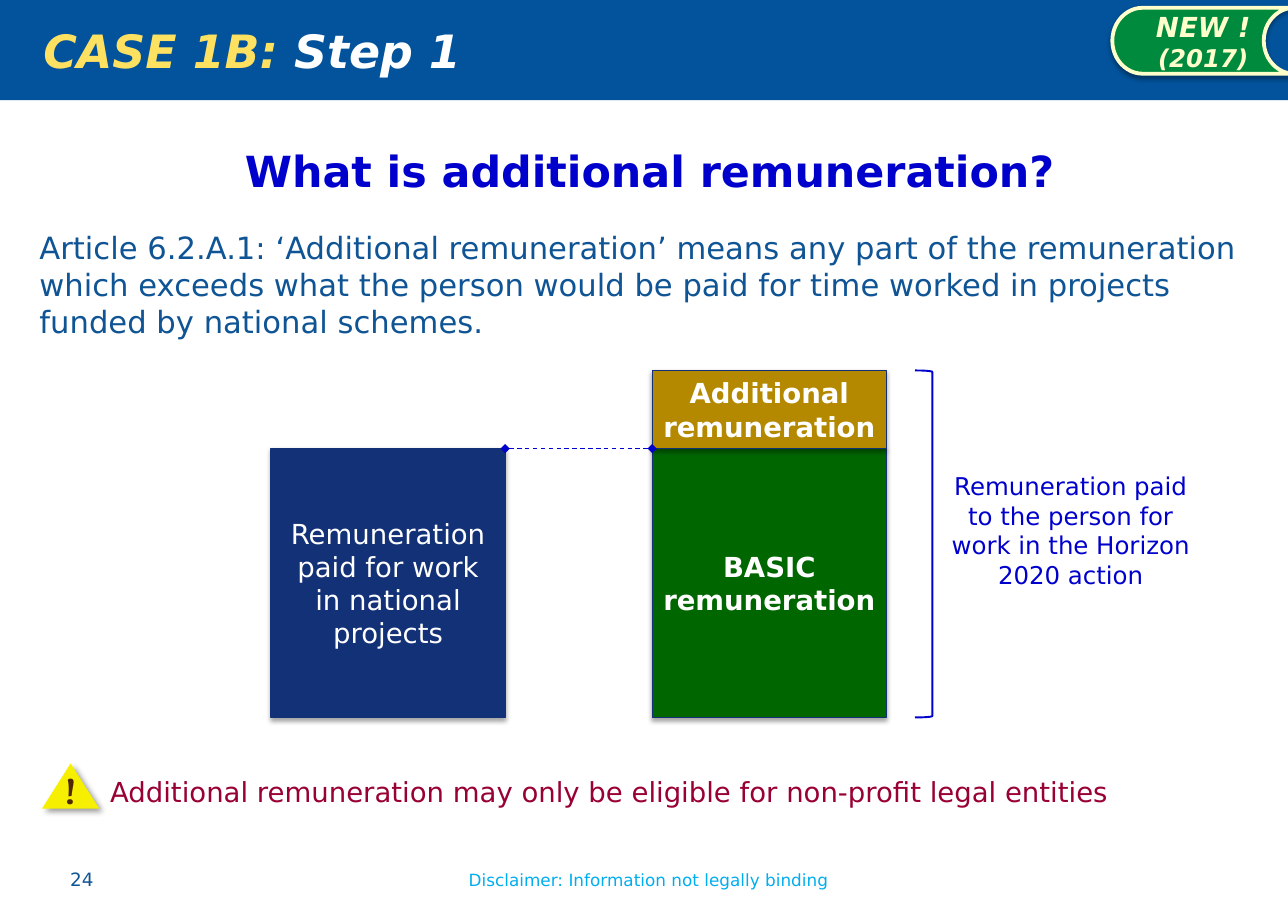
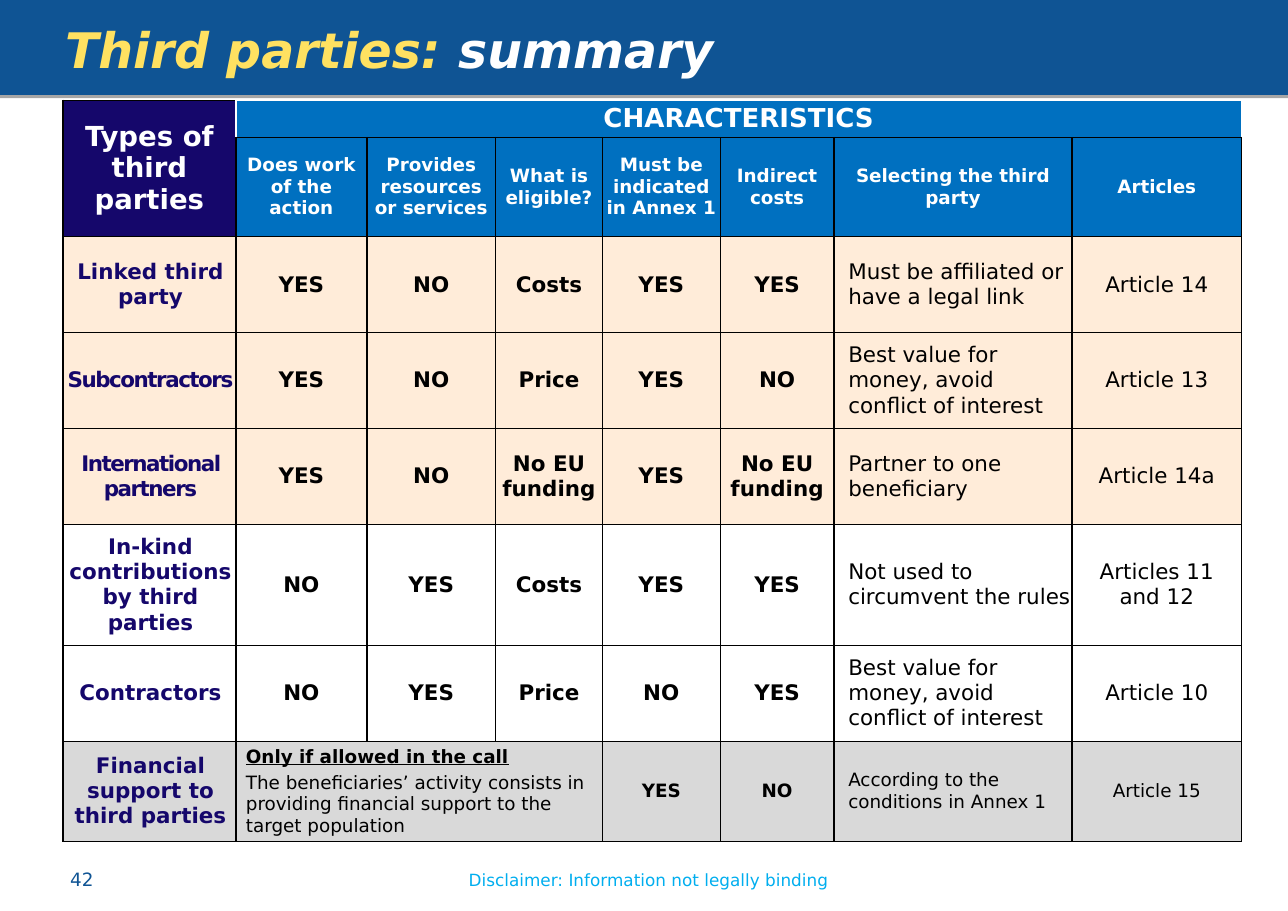
from lxml import etree
from pptx import Presentation
from pptx.dml.color import RGBColor
from pptx.enum.dml import MSO_LINE
from pptx.enum.shapes import MSO_CONNECTOR, MSO_SHAPE
from pptx.enum.text import MSO_ANCHOR, PP_ALIGN
from pptx.oxml.ns import qn
from pptx.util import Cm, Pt

LEFT, CENTER = PP_ALIGN.LEFT, PP_ALIGN.CENTER
TOP, MIDDLE = MSO_ANCHOR.TOP, MSO_ANCHOR.MIDDLE
RECTANGLE, TRIANGLE = MSO_SHAPE.RECTANGLE, MSO_SHAPE.ISOSCELES_TRIANGLE
BADGE, BRACKET = MSO_SHAPE.FLOWCHART_STORED_DATA, MSO_SHAPE.RIGHT_BRACKET
STRAIGHT, DASH = MSO_CONNECTOR.STRAIGHT, MSO_LINE.DASH

WIDTH, HEIGHT = 29.7, 21.0
FONT = "DejaVu Sans"
COLORS = {
    "band": "0F5494", "case_band": "02539C", "title": "FFE161",
    "white": "FFFFFF", "black": "000000", "disclaimer": "00AEEF",
    "blue": "0000CC", "national": "133176", "basic": "006600",
    "additional": "B48900", "badge": "008A3E", "cream": "FFFFCC",
    "warning": "990033", "sign": "F6F000", "mark": "502800",
    "types": "15076B", "header": "0070C0", "peach": "FFECD9",
    "grey": "D9D9D9",
}
TEXT_MARGINS = (0.25, 0.13, 0.25, 0.13)


def rgb(name):
    return RGBColor.from_string(COLORS[name])


class Deck:
    """Holds the shared style and the slide being filled."""

    def __init__(self):
        self.presentation = Presentation()
        self.presentation.slide_width = Cm(WIDTH)
        self.presentation.slide_height = Cm(HEIGHT)
        self.slide = None

    def new_slide(self, number):
        """Start a slide with its header band and footer."""
        self.slide = self.presentation.slides.add_slide(
            self.presentation.slide_layouts[6])
        self.shape(RECTANGLE, 0, 0, WIDTH, 2.11, "band", "band", 5, shadow=(0, 1.8, 90, 35))
        self.text(1.37, 19.89, 2.08, 0.76, [[(number, {})]], size=12, color="band")
        self.text(10.26, 19.91, 9.4, 0.74,
                  [[("Disclaimer: Information not legally binding", {})]],
                  CENTER, size=11, color="disclaimer")

    def fill_frame(self, frame, paragraphs, align=LEFT, anchor=TOP,
                   margins=TEXT_MARGINS, space_before=0, wrap=True, **style):
        """Add paragraphs, each a list of (text, style changes)."""
        frame.word_wrap = wrap
        frame.vertical_anchor = anchor
        (frame.margin_left, frame.margin_top,
         frame.margin_right, frame.margin_bottom) = map(Cm, margins)
        for index, runs in enumerate(paragraphs):
            paragraph = frame.add_paragraph() if index else frame.paragraphs[0]
            paragraph.alignment = align
            if index:
                paragraph.space_before = Pt(space_before)
            for text, changes in runs:
                self.add_run(paragraph, text, **{**style, **changes})

    def add_run(self, paragraph, text, size, color, bold=False, italic=False,
                underline=False, spacing=0, font=FONT):
        run = paragraph.add_run()
        run.text = text
        run.font.name = font
        run.font.size = Pt(size)
        run.font.bold = bold
        run.font.italic = italic
        run.font.underline = underline
        run.font.color.rgb = rgb(color)
        if spacing:
            run._r.get_or_add_rPr().set("spc", str(spacing * 100))

    def text(self, left, top, width, height, paragraphs, align=LEFT, **style):
        box = self.slide.shapes.add_textbox(Cm(left), Cm(top), Cm(width), Cm(height))
        self.fill_frame(box.text_frame, paragraphs, align, **style)

    def shape(self, kind, left, top, width, height, fill=None, line=None,
              line_width=0.75, shadow=None):
        shape = self.slide.shapes.add_shape(
            kind, Cm(left), Cm(top), Cm(width), Cm(height))
        shape.shadow.inherit = False
        if fill:
            shape.fill.solid()
            shape.fill.fore_color.rgb = rgb(fill)
        else:
            shape.fill.background()
        if line:
            shape.line.color.rgb = rgb(line)
            shape.line.width = Pt(line_width)
        else:
            shape.line.fill.background()
        if shadow:
            self.add_shadow(shape, *shadow)
        return shape

    def add_shadow(self, shape, blur, distance, angle, opacity):
        effects = shape._element.spPr.find(qn("a:effectLst"))
        outer = etree.SubElement(
            effects, qn("a:outerShdw"), blurRad=str(Pt(blur)),
            dist=str(Pt(distance)), dir=str(angle * 60000), rotWithShape="0")
        color = etree.SubElement(outer, qn("a:srgbClr"), val=COLORS["black"])
        etree.SubElement(color, qn("a:alpha"), val=str(opacity * 1000))

    def block(self, kind, left, top, width, height, paragraphs, fill,
              line="national", line_width=0.75, **style):
        """A shadowed shape with centred text."""
        shape = self.shape(kind, left, top, width, height, fill, line,
                           line_width, shadow=(3.1, 1.8, 90, 35))
        self.fill_frame(shape.text_frame, paragraphs, CENTER, MIDDLE, **style)

    def connector(self, left, right, height):
        """A dashed level line with a diamond at each end."""
        connector = self.slide.shapes.add_connector(
            STRAIGHT, Cm(left), Cm(height), Cm(right), Cm(height))
        connector.line.color.rgb = rgb("blue")
        connector.line.width = Pt(0.75)
        connector.line.dash_style = DASH
        line = connector.line._get_or_add_ln()
        for end in ("a:headEnd", "a:tailEnd"):
            etree.SubElement(line, qn(end), type="diamond")
        etree.SubElement(connector._element.spPr, qn("a:effectLst"))

    def table(self, left, top, columns, rows):
        frame = self.slide.shapes.add_table(
            len(rows), len(columns), Cm(left), Cm(top), Cm(sum(columns)), Cm(sum(rows)))
        table = frame.table
        table.first_row = table.horz_banding = False
        for column, width in zip(table.columns, columns):
            column.width = Cm(width)
        for row, height in zip(table.rows, rows):
            row.height = Cm(height)
        return table

    def cell(self, cell, fill, borders):
        """Border and fill a cell; borders maps L, R, T, B to widths."""
        properties = cell._tc.get_or_add_tcPr()
        for side in "LRTB":
            if side in borders:
                line = etree.SubElement(properties, qn("a:ln" + side),
                                        w=str(Pt(borders[side])))
                solid = etree.SubElement(line, qn("a:solidFill"))
                etree.SubElement(solid, qn("a:srgbClr"), val=COLORS["black"])
        cell.fill.solid()
        cell.fill.fore_color.rgb = rgb(fill)

    def cell_text(self, cell, text, align=CENTER, indent=0, **style):
        paragraphs = [[(line, {})] for line in text.split("\n")]
        self.cell_paragraphs(cell, paragraphs, align, indent, **style)

    def cell_paragraphs(self, cell, paragraphs, align, indent, **style):
        self.fill_frame(cell.text_frame, paragraphs, align, **style)
        cell.vertical_anchor = MIDDLE
        cell.margin_left = Cm(indent)
        cell.margin_top = cell.margin_right = cell.margin_bottom = 0


def build_remuneration(deck):
    deck.new_slide("24")

    # Title band and badge
    band = deck.shape(RECTANGLE, 0, 0, WIDTH, 2.31, "case_band")
    deck.fill_frame(band.text_frame, [[("CASE 1B: ", {}), ("Step 1", {"color": "white"})]],
                    anchor=MIDDLE, margins=(1, 0.15, 0.28, 0.15),
                    size=30, color="title", bold=True, italic=True)
    deck.block(BADGE, 25.65, 0.18, 4.19, 1.52,
               [[("NEW ! ", {}), ("(2017)", {"size": 16})]],
               "badge", "cream", 2.5, size=18, color="cream", bold=True, italic=True)

    # Question and definition
    deck.text(4.78, 3.2, 20.4, 1.45, [[("What is additional remuneration?", {})]],
              CENTER, size=28, color="blue", bold=True)
    deck.text(0.66, 5.15, 28.37, 2.9, [[(
        "Article 6.2.A.1: ‘Additional remuneration’ means any part of the "
        "remuneration which exceeds what the person would be paid for time "
        "worked in projects funded by national schemes.", {})]],
        size=20, color="band")

    # Bars: national pay on the left, basic plus additional on the right
    national, action, bar_width = 6.25, 15.04, 5.4
    top, level, base = 8.54, 10.34, 16.54
    bars = [
        (national, level, base, "Remuneration paid for work in national projects",
         "national", False),
        (action, level, base, "BASIC remuneration", "basic", True),
        (action, top, level, "Additional remuneration", "additional", True),
    ]
    for left, upper, lower, label, fill, bold in bars:
        deck.block(RECTANGLE, left, upper, bar_width, lower - upper,
                   [[(label, {})]], fill, size=18, color="white", bold=bold)
    deck.connector(national + bar_width, action, level)

    # Bracket over the whole right bar
    deck.shape(BRACKET, 21.1, top, 0.4, base - top, line="blue", line_width=1.25)
    deck.text(21.59, 10.74, 6.2, 3, [[(
        "Remuneration paid to the person for work in the Horizon 2020 action", {})]],
        CENTER, size=16, color="blue")

    # Warning
    sign = deck.shape(TRIANGLE, 0.97, 17.6, 1.32, 1.04, "sign", shadow=(4, 3, 45, 40))
    deck.fill_frame(sign.text_frame, [[("!", {})]], CENTER, MIDDLE, (0, 0, 0, 0.36),
                    wrap=False, size=24, color="mark", bold=True, font="Cambria")
    deck.text(2.29, 17.73, 25.15, 1.02, [[(
        "Additional remuneration may only be eligible for non-profit legal entities", {})]],
        size=18, color="warning")


HEADERS = ["Does work of the action", "Provides resources or services",
           "What is eligible?", "Must be indicated in Annex 1", "Indirect costs",
           "Selecting the third party", "Articles"]
BEST_VALUE = "Best value for money, avoid conflict of interest"
# Fill, letter spacing of the name, text size, then the cells
PARTIES = [
    ("peach", 0, 14, ["Linked third party", "YES", "NO", "Costs", "YES", "YES",
                      "Must be affiliated or have a legal link", "Article 14"]),
    ("peach", -1, 14, ["Subcontractors", "YES", "NO", "Price", "YES", "NO",
                       BEST_VALUE, "Article 13"]),
    ("peach", -1, 14, ["International partners", "YES", "NO", "No EU funding", "YES",
                       "No EU funding", "Partner to one beneficiary", "Article 14a"]),
    ("white", 0, 14, ["In-kind contributions by third parties", "NO", "YES", "Costs",
                      "YES", "YES", "Not used to circumvent the rules",
                      "Articles 11\nand 12"]),
    ("white", 0, 14, ["Contractors", "NO", "YES", "Price", "NO", "YES",
                      BEST_VALUE, "Article 10"]),
    ("grey", 0, 12, ["Financial support to third parties", "", "", "", "YES", "NO",
                     "According to the conditions in Annex 1", "Article 15"]),
]


def build_third_parties(deck):
    deck.new_slide("42")
    deck.text(1.22, 0.3, 26.7, 1.8,
              [[("Third parties: ", {}), ("summary", {"color": "white"})]],
              margins=(0.28, 0.15, 0.28, 0.15),
              size=32, color="title", bold=True, italic=True)

    # Grid and merged cells
    table = deck.table(1.45, 2.31, [3.99, 3.02, 2.97, 2.46, 2.72, 2.62, 5.49, 3.91],
                       [0.86, 2.13, 2.21, 2.21, 2.21, 2.79, 2.21, 2.31])
    last = len(PARTIES) + 1
    table.cell(0, 0).merge(table.cell(1, 0))
    table.cell(0, 1).merge(table.cell(0, 7))
    table.cell(last, 1).merge(table.cell(last, 3))

    # Header rows
    framed = dict.fromkeys("LRTB", 1)
    for row in (0, 1):
        deck.cell(table.cell(row, 0), "types", framed)
        for column in range(1, 8):
            deck.cell(table.cell(row, column), "header", framed if row else {"B": 1})
    deck.cell_text(table.cell(0, 0), "Types of third parties",
                   size=18, color="white", bold=True)
    deck.cell_text(table.cell(0, 1), "CHARACTERISTICS", size=17, color="white", bold=True)
    for column, label in enumerate(HEADERS, 1):
        deck.cell_text(table.cell(1, column), label, size=12, color="white", bold=True)

    # One row for each type of third party
    for row, (fill, spacing, size, texts) in enumerate(PARTIES, 2):
        borders = {"L": 1, "R": 1, "T": 1 if row == 2 else 0.5,
                   "B": 1 if row == last else 0.5}
        for column, text in enumerate(texts):
            cell = table.cell(row, column)
            deck.cell(cell, fill, borders)
            if column == 0:
                deck.cell_text(cell, text, indent=0.05, size=14, color="types",
                               bold=True, spacing=spacing)
            elif column == 6:
                deck.cell_text(cell, text, LEFT, 0.33, size=size, color="black")
            elif text:
                deck.cell_text(cell, text, size=size, color="black", bold=column < 6)

    # Condition for financial support
    deck.cell_paragraphs(table.cell(last, 1), [
        [("Only if allowed in the call", {"bold": True, "underline": True})],
        [("The beneficiaries’ activity consists in providing financial support "
          "to the target population", {})],
    ], LEFT, 0.23, space_before=3, size=12, color="black")


def main():
    deck = Deck()
    build_remuneration(deck)
    build_third_parties(deck)
    deck.presentation.save("out.pptx")


if __name__ == "__main__":
    main()
